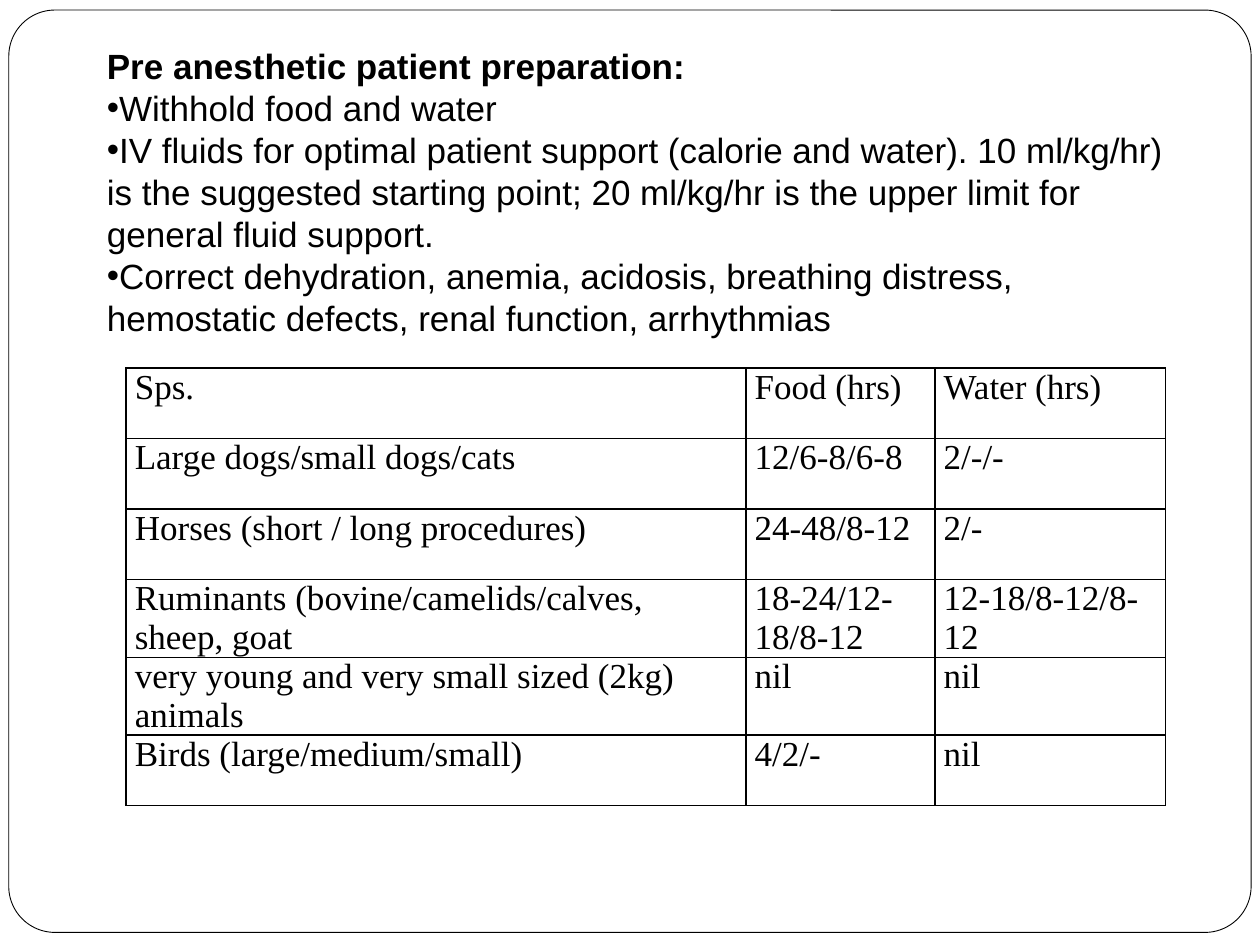
from lxml import etree
from pptx import Presentation
from pptx.dml.color import RGBColor
from pptx.enum.shapes import MSO_SHAPE
from pptx.enum.text import MSO_ANCHOR, MSO_AUTO_SIZE
from pptx.oxml.ns import qn
from pptx.util import Inches, Pt

ROUNDED = MSO_SHAPE.ROUNDED_RECTANGLE
MIDDLE = MSO_ANCHOR.MIDDLE
GROW = MSO_AUTO_SIZE.SHAPE_TO_FIT_TEXT
BLACK = "000000"
WHITE = "FFFFFF"

HEADING = "Pre anesthetic patient preparation:"
STEPS = [
    "Withhold food and water",
    "IV fluids for optimal patient support (calorie and water). 10 ml/kg/hr) is the "
    "suggested starting point; 20 ml/kg/hr is the upper limit for general fluid support.",
    "Correct dehydration, anemia, acidosis, breathing distress, hemostatic defects, "
    "renal function, arrhythmias",
]
FASTING_ROWS = [
    ("Sps.", "Food (hrs)", "Water (hrs)"),
    ("Large dogs/small dogs/cats", "12/6-8/6-8", "2/-/-"),
    ("Horses (short / long procedures)", "24-48/8-12", "2/-"),
    ("Ruminants (bovine/camelids/calves, sheep, goat", "18-24/12-18/8-12", "12-18/8-12/8-12"),
    ("very young and very small sized (2kg) animals", "nil", "nil"),
    ("Birds (large/medium/small)", "4/2/-", "nil"),
]
COLUMN_WIDTHS = [4.92, 1.5, 1.83]
ROW_HEIGHT = 0.56


def color(value):
    """Return the colour of a hex string."""
    return RGBColor.from_string(value)


def write(para, text, font="Arial", size=20, bold=False, fill=BLACK):
    """Add formatted text to a paragraph."""
    span = para.add_run()
    span.text = text
    span.font.name = font
    span.font.size = Pt(size)
    span.font.bold = bold
    span.font.color.rgb = color(fill)


def add_bullet(para):
    """Give a paragraph a bullet without a hanging indent."""
    properties = para._p.get_or_add_pPr()
    properties.set("marL", "0")
    properties.set("indent", "0")
    etree.SubElement(properties, qn("a:buFont"), typeface="Arial")
    etree.SubElement(properties, qn("a:buChar"), char="•")


def add_frame(page):
    """Draw the rounded border around the page."""
    frame = page.shapes.add_shape(
        ROUNDED, Inches(0.07), Inches(0.08), Inches(9.86), Inches(7.32))
    frame.adjustments[0] = 0.05
    frame.shadow.inherit = False
    frame.fill.solid()
    frame.fill.fore_color.rgb = color(WHITE)
    frame.line.color.rgb = color(BLACK)
    frame.line.width = Pt(0.5)


def add_preparation(page):
    """Add the heading and the bulleted preparation steps."""
    box = page.shapes.add_textbox(
        Inches(0.75), Inches(0.29), Inches(8.67), Inches(2.46))
    frame = box.text_frame
    frame.word_wrap = True
    frame.auto_size = GROW
    frame.vertical_anchor = MIDDLE
    write(frame.paragraphs[0], HEADING, bold=True)
    for step in STEPS:
        para = frame.add_paragraph()
        write(para, step)
        add_bullet(para)
    for para in frame.paragraphs:
        para.line_spacing = Pt(24)


def add_borders(cell, width=1, line=BLACK):
    """Draw a solid line on all four sides of a cell."""
    properties = cell._tc.get_or_add_tcPr()
    for index, side in enumerate(("lnL", "lnR", "lnT", "lnB")):
        border = etree.Element(qn(f"a:{side}"), w=str(Pt(width)))
        fill = etree.SubElement(border, qn("a:solidFill"))
        etree.SubElement(fill, qn("a:srgbClr"), val=line)
        properties.insert(index, border)


def fill_cell(cell, text):
    """Write and format one table cell."""
    cell.margin_left = cell.margin_right = Inches(0.07)
    cell.margin_top = cell.margin_bottom = 0
    cell.fill.background()
    write(cell.text_frame.paragraphs[0], text, font="Times New Roman")
    add_borders(cell)


def add_fasting_table(page):
    """Add the table of fasting hours for each species."""
    table = page.shapes.add_table(
        len(FASTING_ROWS), len(COLUMN_WIDTHS), Inches(1), Inches(2.92),
        Inches(sum(COLUMN_WIDTHS)), Inches(ROW_HEIGHT * len(FASTING_ROWS))).table
    table.first_row = False
    table.horz_banding = False
    for column, width in zip(table.columns, COLUMN_WIDTHS):
        column.width = Inches(width)
    for row, texts in zip(table.rows, FASTING_ROWS):
        row.height = Inches(ROW_HEIGHT)
        for cell, text in zip(row.cells, texts):
            fill_cell(cell, text)


def main():
    """Build and save the deck."""
    deck = Presentation()
    deck.slide_width = Inches(10)
    deck.slide_height = Inches(7.5)
    page = deck.slides.add_slide(deck.slide_layouts[6])
    add_frame(page)
    add_fasting_table(page)
    add_preparation(page)
    deck.save("out.pptx")


if __name__ == "__main__":
    main()
